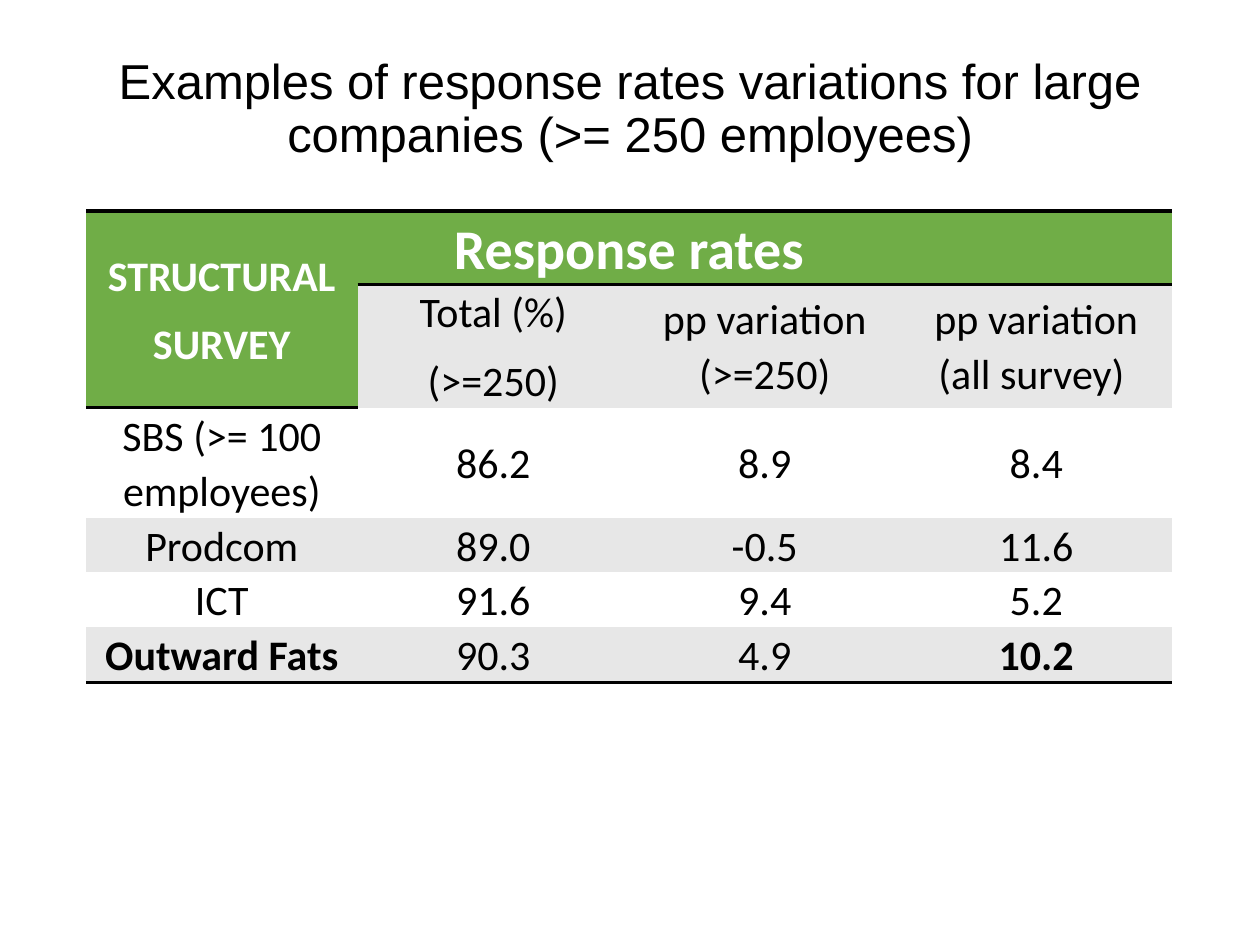
from dataclasses import dataclass

from lxml import etree
from pptx import Presentation
from pptx.dml.color import RGBColor
from pptx.enum.text import MSO_ANCHOR, PP_ALIGN
from pptx.oxml.ns import qn
from pptx.table import Table, _Cell
from pptx.util import Emu, Pt

MIDDLE = MSO_ANCHOR.MIDDLE
BOTTOM = MSO_ANCHOR.BOTTOM
CENTER = PP_ALIGN.CENTER
EMU_PER_INCH = 914400
PX_PER_INCH = 126
TITLE_ONLY_LAYOUT = 5
NO_GRID_STYLE = "{2D5ABB26-0587-4C30-8999-92F81FD0307C}"
COLORS = {
    "black": "000000",
    "white": "FFFFFF",
    "green": "70AD47",
    "gray": "E7E7E7",
}


@dataclass
class CellStyle:
    fill: str
    color: str = "black"
    size: int = 24
    bold: bool = False
    anchor: MSO_ANCHOR = MIDDLE
    borders: str = ""


SURVEYS = [
    ["SBS (>= 100 employees)", "86.2", "8.9", "8.4"],
    ["Prodcom", "89.0", "-0.5", "11.6"],
    ["ICT", "91.6", "9.4", "5.2"],
    ["Outward Fats", "90.3", "4.9", "10.2"],
]
HEADINGS = ["Total (%)\n(>=250)", "pp variation (>=250)", "pp variation (all survey) "]
BOLD_TEXTS = {"Outward Fats", "10.2"}


def px(length: int) -> Emu:
    return Emu(round(length * EMU_PER_INCH / PX_PER_INCH))


def rgb(name: str) -> RGBColor:
    return RGBColor.from_string(COLORS[name])


def add_border(cell: _Cell, side: str, position: int) -> None:
    line = etree.Element(qn(f"a:ln{side}"), w=str(Pt(2)))
    fill = etree.SubElement(line, qn("a:solidFill"))
    etree.SubElement(fill, qn("a:srgbClr"), val=COLORS["black"])
    cell._tc.get_or_add_tcPr().insert(position, line)


def fill_cell(cell: _Cell, text: str, style: CellStyle) -> None:
    cell.fill.solid()
    cell.fill.fore_color.rgb = rgb(style.fill)
    cell.vertical_anchor = style.anchor
    cell.margin_left = cell.margin_right = px(9)
    cell.margin_top = cell.margin_bottom = 0
    for position, side in enumerate(style.borders):
        add_border(cell, side, position)
    if not text:
        return
    cell.text_frame.text = text
    for paragraph in cell.text_frame.paragraphs:
        paragraph.alignment = CENTER
        paragraph.line_spacing = 1.07
        paragraph.space_after = Pt(8)
        for run in paragraph.runs:
            run.font.name = "Calibri"
            run.font.size = Pt(style.size)
            run.font.bold = style.bold
            run.font.color.rgb = rgb(style.color)


def fill_header(table: Table) -> None:
    survey = CellStyle("green", "white", bold=True, borders="TB")
    rates = CellStyle("green", "white", 32, True, BOTTOM, "TB")
    fill_cell(table.cell(0, 0), "STRUCTURAL\nSURVEY", survey)
    fill_cell(table.cell(1, 0), "", CellStyle("green", borders="B"))
    fill_cell(table.cell(0, 1), "Response rates", rates)
    for column in (2, 3):
        fill_cell(table.cell(0, column), "", rates)
    for column, heading in enumerate(HEADINGS, start=1):
        fill_cell(table.cell(1, column), heading, CellStyle("gray"))
    table.cell(0, 0).merge(table.cell(1, 0))
    table.cell(0, 1).merge(table.cell(0, 2))


def fill_surveys(table: Table) -> None:
    for index, survey in enumerate(SURVEYS):
        fill = "gray" if index % 2 else "white"
        borders = "B" if index == len(SURVEYS) - 1 else ""
        for column, text in enumerate(survey):
            style = CellStyle(fill, bold=text in BOLD_TEXTS, borders=borders)
            fill_cell(table.cell(index + 2, column), text, style)


def add_title(slide, text: str) -> None:
    title = slide.shapes.title
    title.left, title.top, title.width, title.height = px(87), px(50), px(1086), px(120)
    title.text_frame.text = text
    title.text_frame.vertical_anchor = MIDDLE
    paragraph = title.text_frame.paragraphs[0]
    paragraph.alignment = CENTER
    paragraph.line_spacing = 0.9
    font = paragraph.runs[0].font
    font.name = "Arial"
    font.size = Pt(28)
    font.color.rgb = rgb("black")


def add_rates_table(slide) -> None:
    rows = len(SURVEYS) + 2
    shape = slide.shapes.add_table(rows, 4, px(86), px(211), px(1086), px(461))
    table = shape.table
    table._tbl.tblPr.find(qn("a:tableStyleId")).text = NO_GRID_STYLE
    table.first_row = table.horz_banding = False
    for row in table.rows:
        row.height = px(52)
    shape.height = px(461)
    fill_header(table)
    fill_surveys(table)


def main() -> None:
    presentation = Presentation()
    presentation.slide_width, presentation.slide_height = px(1260), px(945)
    slide = presentation.slides.add_slide(presentation.slide_layouts[TITLE_ONLY_LAYOUT])
    add_title(slide, "Examples of response rates variations for large companies (>= 250 employees)")
    add_rates_table(slide)
    presentation.save("out.pptx")


if __name__ == "__main__":
    main()
